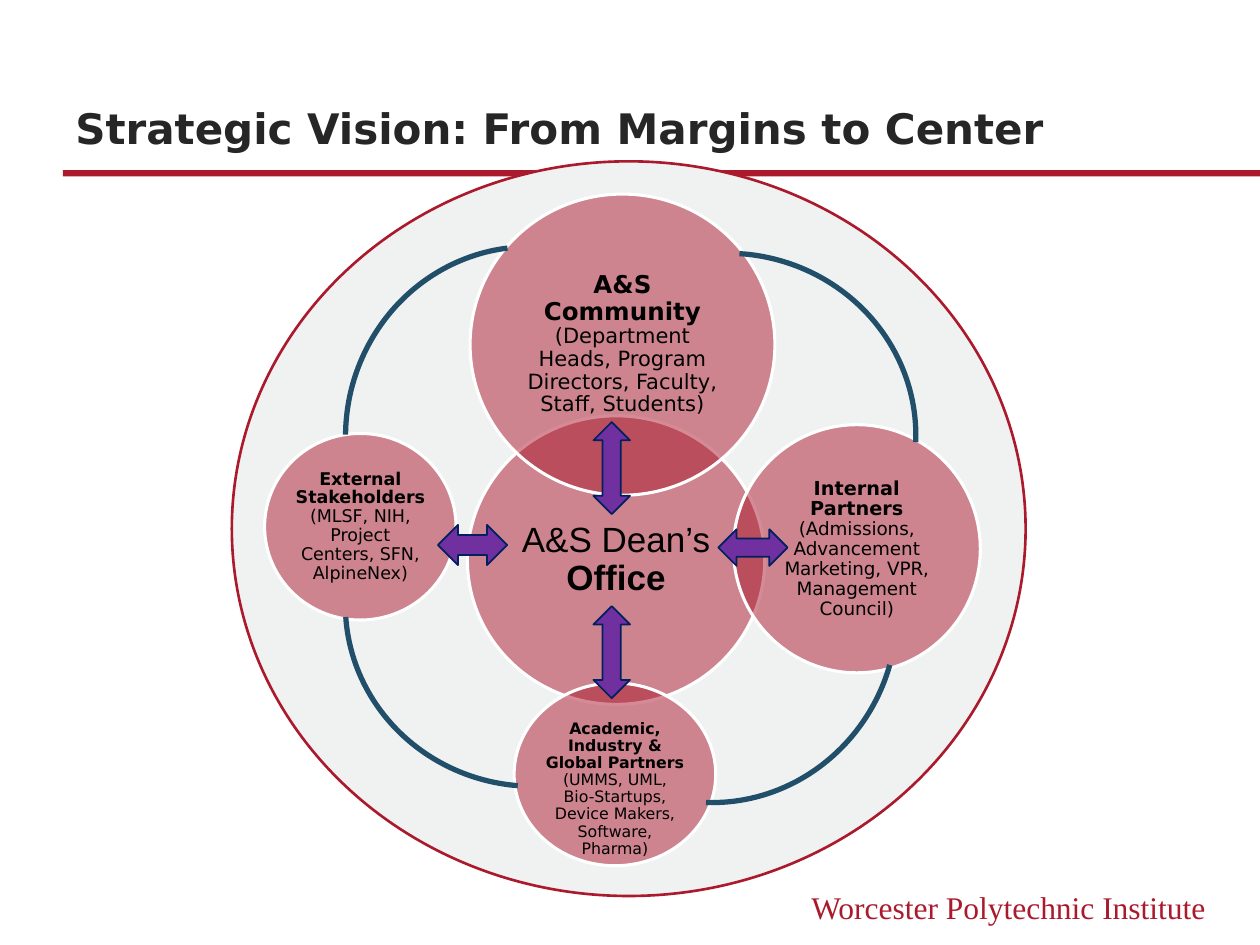
from lxml import etree
from pptx import Presentation
from pptx.dml.color import RGBColor
from pptx.enum import shapes as s, text as t
from pptx.oxml import ns
from pptx.util import Pt

CRIMSON, PURPLE, NAVY, TEAL = "AB192D", "7030A0", "002060", "214F69"
SANS = "DejaVu Sans"


def color(hex_code):
    return RGBColor.from_string(hex_code)


def write(frame, runs, font=SANS, ink="000000", align=t.PP_ALIGN.LEFT,
          anchor=t.MSO_ANCHOR.TOP, spacing=1.0, margins=(7.2, 3.6, 7.2, 3.6)):
    """Fill a text frame with one paragraph of (text, size, bold) runs."""
    frame.word_wrap = True
    frame.vertical_anchor = anchor
    (frame.margin_left, frame.margin_top,
     frame.margin_right, frame.margin_bottom) = map(Pt, margins)
    paragraph = frame.paragraphs[0]
    paragraph.alignment = align
    paragraph.line_spacing = spacing
    for words, size, bold in runs:
        run = paragraph.add_run()
        run.text = words
        run.font.name, run.font.size, run.font.bold = font, Pt(size), bold
        run.font.color.rgb = color(ink)


def draw(slide, kind, box, fill=None, line=None, width=1, opacity=100, turn=0):
    shape = slide.shapes.add_shape(kind, *map(Pt, box))
    shape.shadow.inherit = False
    shape.rotation = turn
    if fill:
        shape.fill.solid()
        shape.fill.fore_color.rgb = color(fill)
        if opacity < 100:
            tint = shape.fill._xPr.find(".//" + ns.qn("a:srgbClr"))
            etree.SubElement(tint, ns.qn("a:alpha"), val=str(opacity * 1000))
    else:
        shape.fill.background()
    if line:
        shape.line.color.rgb = color(line)
        shape.line.width = Pt(width)
    else:
        shape.line.fill.background()
    return shape


def add_frame(slide, box):
    """Title, rule and institute name within the slide's box."""
    left, top, width, height = box
    draw(slide, s.MSO_SHAPE.RECTANGLE, (left + 36, top + 97.2, width - 36, 3.6), CRIMSON)
    institute = slide.shapes.add_textbox(
        Pt(left + 432), Pt(top + height - 36), Pt(264.2), Pt(28.8))
    write(institute.text_frame, [("Worcester Polytechnic Institute", 18, False)],
          font="Times New Roman", ink=CRIMSON, align=t.PP_ALIGN.RIGHT)
    title = slide.shapes.add_textbox(
        Pt(left + 36), Pt(top + 27.4), Pt(width - 72), Pt(63.4))
    write(title.text_frame, [("Strategic Vision: From Margins to Center", 24, True)],
          ink="262626", anchor=t.MSO_ANCHOR.BOTTOM)


def add_circles(slide, left, top):
    # offset and size, font, margin, extra top margin, runs
    circles = [
        ((134.6, 145.4, 169.9, 164.9), "Arial", 2, 0,
         [("A&S Dean’s ", 20, False), ("Office", 20, True)]),
        ((136.1, 18.7, 174.2, 172.1), SANS, 1.4, 0,
         [("A&S Community ", 14, True),
          ("(Department Heads, Program Directors, Faculty, Staff, Students)", 12, False)]),
        ((286.6, 150.5, 141.1, 141.8), SANS, 1.4, 0,
         [("Internal Partners ", 11, True),
          ("(Admissions, Advancement Marketing, VPR, Management Council)", 10.5, False)]),
        ((161.3, 298.1, 115.2, 104.4), SANS, 1.2, 17,
         [("Academic, Industry & Global Partners ", 9, True),
          ("(UMMS, UML, Bio-Startups, Device Makers, Software, Pharma)", 9, False)]),
        ((18.7, 155.5, 109.4, 106.6), SANS, 0.9, 0,
         [("External Stakeholders ", 10, True),
          ("(MLSF, NIH, Project Centers, SFN, AlpineNex)", 10, False)]),
    ]
    for (x, y, width, height), font, margin, drop, runs in circles:
        circle = draw(slide, s.MSO_SHAPE.OVAL, (left + x, top + y, width, height),
                      CRIMSON, "FFFFFF", 1.75, opacity=50)
        write(circle.text_frame, runs, font=font, align=t.PP_ALIGN.CENTER,
              anchor=t.MSO_ANCHOR.MIDDLE, spacing=0.9,
              margins=(margin, margin + drop, margin, margin))


def add_arrows(slide, left, top):
    arrows = [(206.6, 149, 20.9, 52.6, 0), (206.6, 254.2, 20.9, 52.6, 0),
              (126, 199.4, 23, 39.6, 270), (287.3, 200.9, 20.9, 39.6, 90)]
    for x, y, width, height, turn in arrows:
        draw(slide, s.MSO_SHAPE.UP_DOWN_ARROW, (left + x, top + y, width, height),
             PURPLE, NAVY, turn=turn)


def add_arcs(slide, left, top):
    """Curves that link neighbouring outer circles."""
    arcs = [(177.1, 52.6, 6.8, 159.94, 213.52), (64.8, 151.2, 183.9, 162.45, 211.65),
            (61.2, 52.6, 281.6, 154.86, 205.62), (169.9, 157, 108.6, 160.25, 206.74)]
    for x, y, turn, start, end in arcs:
        arc = draw(slide, s.MSO_SHAPE.ARC, (left + x, top + y, 213.8, 205.9),
                   line=TEAL, width=3, turn=turn)
        arc.adjustments[0], arc.adjustments[1] = start, end


def add_vision(slide, box):
    left, top = box[:2]
    draw(slide, s.MSO_SHAPE.OVAL, box, "F0F1F1", CRIMSON, 1.5)
    add_circles(slide, left, top)
    add_arrows(slide, left, top)
    add_arcs(slide, left, top)


def main():
    deck = Presentation()
    deck.slide_width, deck.slide_height = Pt(720), Pt(540)
    slide = deck.slides.add_slide(deck.slide_layouts[6])
    add_frame(slide, (0, 0, 720, 540))
    add_vision(slide, (132.5, 92.2, 453.6, 419.8))
    deck.save("out.pptx")


if __name__ == "__main__":
    main()
